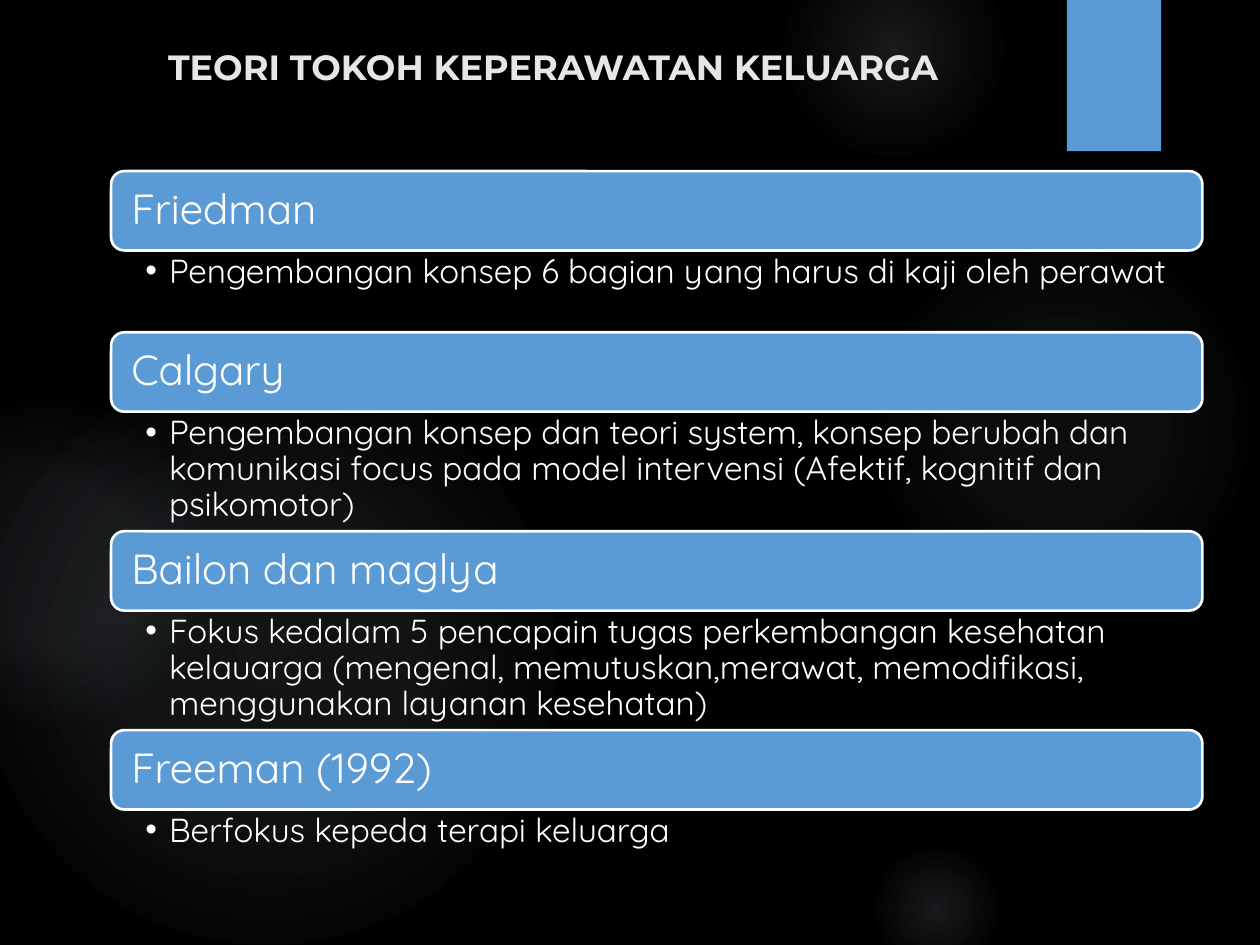
from dataclasses import dataclass

from lxml.etree import SubElement
from pptx import Presentation
from pptx.dml.color import RGBColor
from pptx.enum.shapes import MSO_SHAPE as Shape
from pptx.enum.text import MSO_ANCHOR as Anchor, MSO_AUTO_SIZE as AutoSize, PP_ALIGN as Align
from pptx.oxml import parse_xml
from pptx.oxml.ns import nsdecls, qn
from pptx.util import Cm, Pt

TITLE = "TEORI TOKOH KEPERAWATAN KELUARGA"
# Theorist, contribution, height of the contribution in cm
THEORIES = [
    ("Friedman", "Pengembangan konsep 6 bagian yang harus di kaji oleh perawat", 1.65),
    ("Calgary", "Pengembangan konsep dan teori system, konsep berubah dan komunikasi "
     "focus pada model intervensi (Afektif, kognitif dan psikomotor)", 2.41),
    ("Bailon dan maglya", "Fokus kedalam 5 pencapain tugas perkembangan kesehatan "
     "kelauarga (mengenal, memutuskan,merawat, memodifikasi, "
     "menggunakan layanan kesehatan)", 2.41),
    ("Freeman (1992)", "Berfokus kepeda terapi keluarga", 1.09),
]
# Left, top and diameter in cm, then (position, opacity) stops in percent
GLOWS = [
    (17.5, 4.65, 7.82, [(0, 7), (36, 6), (69, 0)]),
    (15.8, -1.27, 4.45, [(0, 14), (36, 7), (73, 0)]),
    (17.5, 16.94, 2.74, [(0, 14), (36, 7), (66, 0)]),
    (-0.43, 7.42, 11.63, [(0, 11), (36, 10), (75, 0)]),
    (-2.34, 8.05, 6.55, [(0, 8), (36, 8), (72, 0)]),
]
LIST_LEFT, LIST_TOP, LIST_WIDTH, BAR_HEIGHT = 2.24, 3.45, 22, 1.6


@dataclass(frozen=True)
class Theme:
    background: str = "000000"
    accent: str = "5B9BD5"
    glow: str = "ADB9CA"
    title: str = "E7E6E6"
    text: str = "FFFFFF"
    title_font: str = "Montserrat"
    body_font: str = "Quicksand"
    title_size: int = 20
    heading_size: int = 24
    body_size: int = 19


THEME = Theme()


def paint(fill, color):
    fill.solid()
    fill.fore_color.rgb = RGBColor.from_string(color)


def write(shape, text, *, size, font=THEME.body_font, color=THEME.text, bold=False,
          align=Align.LEFT, anchor=Anchor.TOP, insets=(0.25, 0.13, 0.25, 0.13),
          spacing=0.9):
    """Fill a shape with one formatted paragraph; insets run left, top, right, bottom."""
    frame = shape.text_frame
    frame.word_wrap = True
    frame.auto_size = AutoSize.NONE
    frame.vertical_anchor = anchor
    (frame.margin_left, frame.margin_top,
     frame.margin_right, frame.margin_bottom) = map(Cm, insets)
    para = frame.paragraphs[0]
    para.alignment = align
    para.line_spacing = spacing
    span = para.add_run()
    span.text = text
    span.font.name, span.font.size, span.font.bold = font, Pt(size), bold
    span.font.color.rgb = RGBColor.from_string(color)
    return para


def add_bullet(para, indent):
    props = para._p.get_or_add_pPr()
    props.set("marL", str(Cm(indent)))
    props.set("indent", str(-Cm(indent)))
    SubElement(props, qn("a:buFont")).set("typeface", "Arial")
    SubElement(props, qn("a:buChar")).set("char", "•")


def add_box(page, kind, left, top, width, height):
    box = page.shapes.add_shape(kind, Cm(left), Cm(top), Cm(width), Cm(height))
    box.shadow.inherit = False
    paint(box.fill, THEME.accent)
    box.line.fill.background()
    return box


def add_glow(page, left, top, size, stops):
    """Draw a circle whose transparent tint fades from the centre outwards."""
    circle = add_box(page, Shape.OVAL, left, top, size, size)
    stop_xml = "".join(
        f'<a:gs pos="{position * 1000}"><a:srgbClr val="{THEME.glow}">'
        f'<a:alpha val="{opacity * 1000}"/></a:srgbClr></a:gs>'
        for position, opacity in stops)
    gradient = parse_xml(
        f'<a:gradFill {nsdecls("a")} rotWithShape="1"><a:gsLst>{stop_xml}</a:gsLst>'
        '<a:path path="circle"><a:fillToRect l="50000" t="50000" r="50000" b="50000"/>'
        '</a:path></a:gradFill>')
    props = circle._element.spPr
    props.replace(props.find(qn("a:solidFill")), gradient)


def add_title(page):
    title = page.shapes.title
    title.left, title.top, title.width, title.height = map(Cm, (1.35, 0.79, 19.6, 2.1))
    write(title, TITLE, size=THEME.title_size, font=THEME.title_font, color=THEME.title,
          bold=True, align=Align.CENTER, spacing=1.0)
    page.shapes.element.append(title.element)  # bring in front of the glows


def add_theories(page):
    top = LIST_TOP
    for name, contribution, height in THEORIES:
        bar = add_box(page, Shape.ROUNDED_RECTANGLE, LIST_LEFT, top, LIST_WIDTH, BAR_HEIGHT)
        paint(bar.line.fill, THEME.text)
        bar.line.width = Pt(1.5)
        write(bar, name, size=THEME.heading_size, anchor=Anchor.MIDDLE,
              insets=(0.33, 0.25, 0.33, 0.25))
        top += BAR_HEIGHT
        box = page.shapes.add_textbox(Cm(LIST_LEFT), Cm(top), Cm(LIST_WIDTH), Cm(height))
        para = write(box, contribution, size=THEME.body_size,
                     insets=(0.69, 0.08, 0.48, 0.08))
        add_bullet(para, 0.48)
        top += height


def main():
    deck = Presentation()
    deck.slide_width, deck.slide_height = Cm(25.4), Cm(19.05)
    page = deck.slides.add_slide(deck.slide_layouts.get_by_name("Title Only"))
    paint(page.background.fill, THEME.background)
    for glow in GLOWS:
        add_glow(page, *glow)
    add_box(page, Shape.RECTANGLE, 21.51, 0, 1.9, 3.05)
    add_title(page)
    add_theories(page)
    deck.save("out.pptx")


if __name__ == "__main__":
    main()
